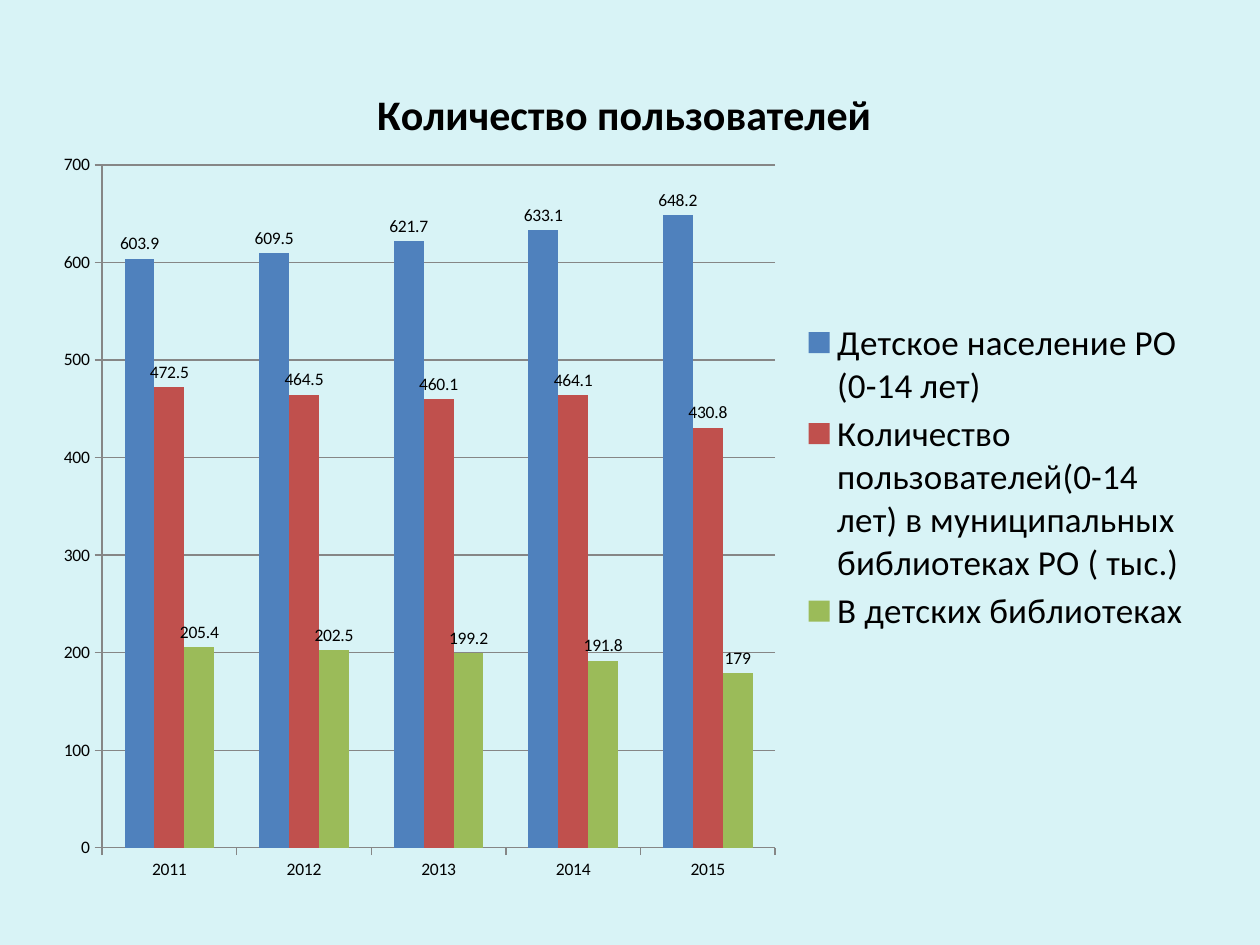
import dataclasses
import typing

import pptx
import pptx.chart.data
import pptx.dml.color
import pptx.enum.chart
import pptx.oxml
import pptx.oxml.ns
import pptx.util

Inches = pptx.util.Inches
RGBColor = pptx.dml.color.RGBColor

BACKGROUND = RGBColor(0xD8, 0xF3, 0xF6)
BLACK = RGBColor(0x00, 0x00, 0x00)
AXIS_GRAY = RGBColor(0x86, 0x86, 0x86)
BLUE = RGBColor(0x4F, 0x81, 0xBD)
RED = RGBColor(0xC0, 0x50, 0x4D)
GREEN = RGBColor(0x9B, 0xBB, 0x59)


@dataclasses.dataclass
class UserSeries:
    name: str
    values: tuple[float, ...]
    color: RGBColor


TITLE = "Количество пользователей"
YEARS = ("2011", "2012", "2013", "2014", "2015")
USER_SERIES = (
    UserSeries("Детское население РО (0-14 лет)",
               (603.9, 609.5, 621.7, 633.1, 648.2), BLUE),
    UserSeries("Количество пользователей(0-14 лет) в муниципальных "
               "библиотеках РО ( тыс.)",
               (472.5, 464.5, 460.1, 464.1, 430.8), RED),
    UserSeries("В детских библиотеках",
               (205.4, 202.5, 199.2, 191.8, 179), GREEN),
)


def set_format(target: typing.Any, values: dict[str, typing.Any]) -> None:
    for name, value in values.items():
        setattr(target, name, value)


def set_font(font: typing.Any, size: float, bold: bool = False) -> None:
    set_format(font, {"name": "Calibri", "size": pptx.util.Pt(size), "bold": bold})
    font.color.rgb = BLACK


def set_line(line: typing.Any) -> None:
    line.color.rgb = AXIS_GRAY
    line.width = pptx.util.Pt(0.75)


def make_layout(x: float, y: float, width: float, height: float,
                inner: bool = False) -> typing.Any:
    """Return a manual layout in fractions of the chart's size."""
    target = '<c:layoutTarget val="inner"/>' if inner else ""
    sizes = "".join(f'<c:{tag} val="{value}"/>' for tag, value in
                    zip("xywh", (x, y, width, height)))
    return pptx.oxml.parse_xml(
        f'<c:layout {pptx.oxml.ns.nsdecls("c")}><c:manualLayout>{target}'
        f'<c:xMode val="edge"/><c:yMode val="edge"/>{sizes}'
        '</c:manualLayout></c:layout>')


def add_user_chart(slide: typing.Any) -> typing.Any:
    data = pptx.chart.data.CategoryChartData()
    data.categories = YEARS
    for series in USER_SERIES:
        data.add_series(series.name, series.values)
    return slide.shapes.add_chart(
        pptx.enum.chart.XL_CHART_TYPE.COLUMN_CLUSTERED,
        Inches(0.35), Inches(0.44), Inches(9.21), Inches(6.69), data).chart


def format_title(chart: typing.Any) -> None:
    chart.has_title = True
    text_frame = chart.chart_title.text_frame
    text_frame.text = TITLE
    set_font(text_frame.paragraphs[0].runs[0].font, 24, bold=True)
    chart.chart_title.include_in_layout = False


def format_axes(chart: typing.Any) -> None:
    tick_mark = pptx.enum.chart.XL_TICK_MARK
    for axis in (chart.category_axis, chart.value_axis):
        set_format(axis, {"major_tick_mark": tick_mark.OUTSIDE,
                          "minor_tick_mark": tick_mark.NONE})
        set_font(axis.tick_labels.font, 10)
        set_line(axis.format.line)
    set_format(chart.value_axis, {"minimum_scale": 0, "maximum_scale": 700,
                                  "major_unit": 100, "has_major_gridlines": True})
    set_line(chart.value_axis.major_gridlines.format.line)


def format_columns(chart: typing.Any) -> None:
    plot = chart.plots[0]
    set_format(plot, {"gap_width": 150, "overlap": 0, "vary_by_categories": False})
    for column_series, series in zip(plot.series, USER_SERIES):
        column_series.format.fill.solid()
        column_series.format.fill.fore_color.rgb = series.color
        labels = column_series.data_labels
        set_format(labels, {
            "show_value": True,
            "position": pptx.enum.chart.XL_LABEL_POSITION.OUTSIDE_END})
        set_font(labels.font, 10)


def format_legend(chart: typing.Any) -> None:
    chart.has_legend = True
    set_format(chart.legend, {
        "position": pptx.enum.chart.XL_LEGEND_POSITION.RIGHT,
        "include_in_layout": False})
    set_font(chart.legend.font, 20)


def place_parts(chart: typing.Any) -> None:
    layout_tag = pptx.oxml.ns.qn("c:layout")
    plot_area = chart.element.chart.plotArea
    legend = chart.legend._element
    for part in (plot_area, legend):
        for layout in part.findall(layout_tag):
            part.remove(layout)
    plot_area.insert(0, make_layout(0.05, 0.13, 0.58, 0.81, inner=True))
    legend.find(pptx.oxml.ns.qn("c:legendPos")).addnext(
        make_layout(0.65, 0.31, 0.34, 0.38))


def main() -> None:
    presentation = pptx.Presentation()
    set_format(presentation, {"slide_width": Inches(10), "slide_height": Inches(7.5)})
    slide = presentation.slides.add_slide(presentation.slide_layouts[6])

    # Background
    slide.background.fill.solid()
    slide.background.fill.fore_color.rgb = BACKGROUND

    # Chart of library users by year
    chart = add_user_chart(slide)
    set_font(chart.font, 10)
    format_title(chart)
    format_axes(chart)
    format_columns(chart)
    format_legend(chart)
    place_parts(chart)

    presentation.save("out.pptx")


if __name__ == "__main__":
    main()
